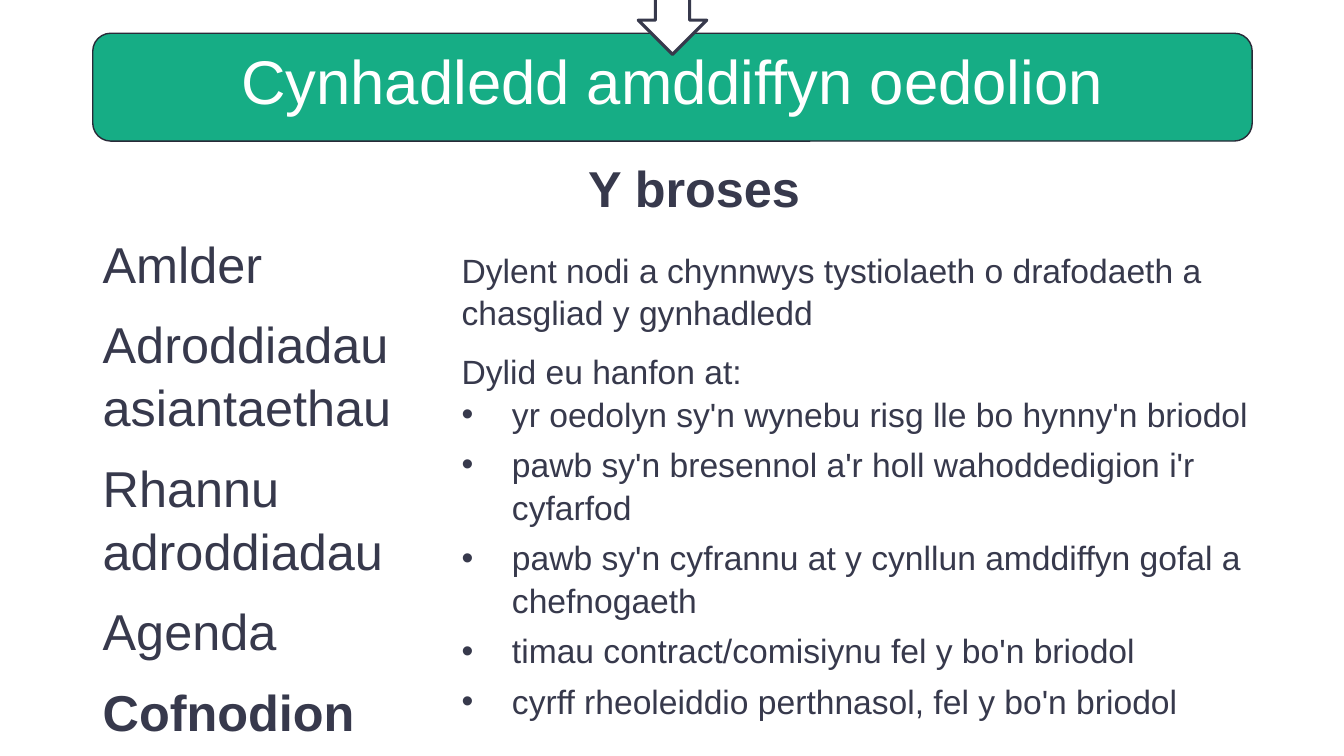
from pptx import Presentation
from pptx import util as u
from pptx.dml.color import RGBColor
from pptx.enum import shapes, text
from pptx.oxml.ns import qn
from lxml import etree

# Content
TITLE = "Cynhadledd amddiffyn oedolion"
HEADING = "Y broses"
STEPS = ["Amlder", "Adroddiadau asiantaethau", "Rhannu adroddiadau", "Agenda"]
CURRENT_STEP = "Cofnodion"
GUIDANCE = "Dylent nodi a chynnwys tystiolaeth o drafodaeth a chasgliad y gynhadledd"
RECIPIENTS_LEAD = "Dylid eu hanfon at:"
RECIPIENTS = [
    "yr oedolyn sy'n wynebu risg lle bo hynny'n briodol",
    "pawb sy'n bresennol a'r holl wahoddedigion i'r cyfarfod",
    "pawb sy'n cyfrannu at y cynllun amddiffyn gofal a chefnogaeth",
    "timau contract/comisiynu fel y bo'n briodol",
    "cyrff rheoleiddio perthnasol, fel y bo'n briodol",
]
COLORS = {"green": "16AD85", "edge": "292A38", "ink": "37394C", "white": "FFFFFF"}
FONT = "Arial"
LEFT = 0.92
INDENT = u.Inches(0.5)


def color(name):
    return RGBColor.from_string(COLORS[name])


def add_block(page, kind, left, top, width, height, fill, line, weight):
    block = page.shapes.add_shape(kind, *map(u.Inches, (left, top, width, height)))
    block.shadow.inherit = False
    block.fill.solid()
    block.fill.fore_color.rgb = color(fill)
    block.line.color.rgb = color(line)
    block.line.width = u.Pt(weight)
    return block


def add_text_box(page, left, top, width, height):
    box = page.shapes.add_textbox(*map(u.Inches, (left, top, width, height)))
    box.text_frame.word_wrap = True
    return box


def write(box, words, size=24, ink="ink", bold=False, align=text.PP_ALIGN.LEFT,
          spacing=1.05, after=0, bullet=False):
    frame = box.text_frame
    para = frame.paragraphs[0] if not frame.text else frame.add_paragraph()
    para.alignment = align
    para.line_spacing = spacing
    para.space_after = u.Pt(after)
    if bullet:
        props = para._p.get_or_add_pPr()
        props.set("marL", str(INDENT))
        props.set("indent", str(-INDENT))
        etree.SubElement(props, qn("a:buFont"), typeface=FONT)
        etree.SubElement(props, qn("a:buChar"), char="•")
    span = para.add_run()
    span.text = words
    span.font.name = FONT
    span.font.size = u.Pt(size)
    span.font.bold = bold
    span.font.color.rgb = color(ink)


def main():
    deck = Presentation()
    deck.slide_width, deck.slide_height = u.Inches(13.33), u.Inches(7.5)
    page = deck.slides.add_slide(deck.slide_layouts[6])
    center = text.PP_ALIGN.CENTER

    # Title banner and incoming arrow
    banner = add_block(page, shapes.MSO_SHAPE.ROUNDED_RECTANGLE, LEFT, 0.33, 11.5, 1.07,
                       "green", "edge", 1)
    banner.text_frame.word_wrap = True
    banner.text_frame.vertical_anchor = text.MSO_ANCHOR.MIDDLE
    write(banner, TITLE, size=44, ink="white", align=center, spacing=0.8)
    add_block(page, shapes.MSO_SHAPE.DOWN_ARROW, 6.33, -0.46, 0.68, 1,
              "white", "ink", 2.25)

    # Heading
    heading = add_text_box(page, LEFT, 1.58, 11.93, 0.65)
    write(heading, HEADING, size=36, bold=True, align=center, spacing=0.9, after=6)

    # Steps, with the current one in bold
    steps = add_text_box(page, LEFT, 2.23, 3.26, 5.02)
    for step in STEPS + [CURRENT_STEP]:
        write(steps, step, size=36, bold=step == CURRENT_STEP, after=12)

    # Guidance and recipients
    body = add_text_box(page, 4.48, 2.41, 8.56, 6.03)
    write(body, GUIDANCE, after=12)
    write(body, RECIPIENTS_LEAD)
    for recipient in RECIPIENTS:
        write(body, recipient, after=6, bullet=True)

    deck.save("out.pptx")


if __name__ == "__main__":
    main()
